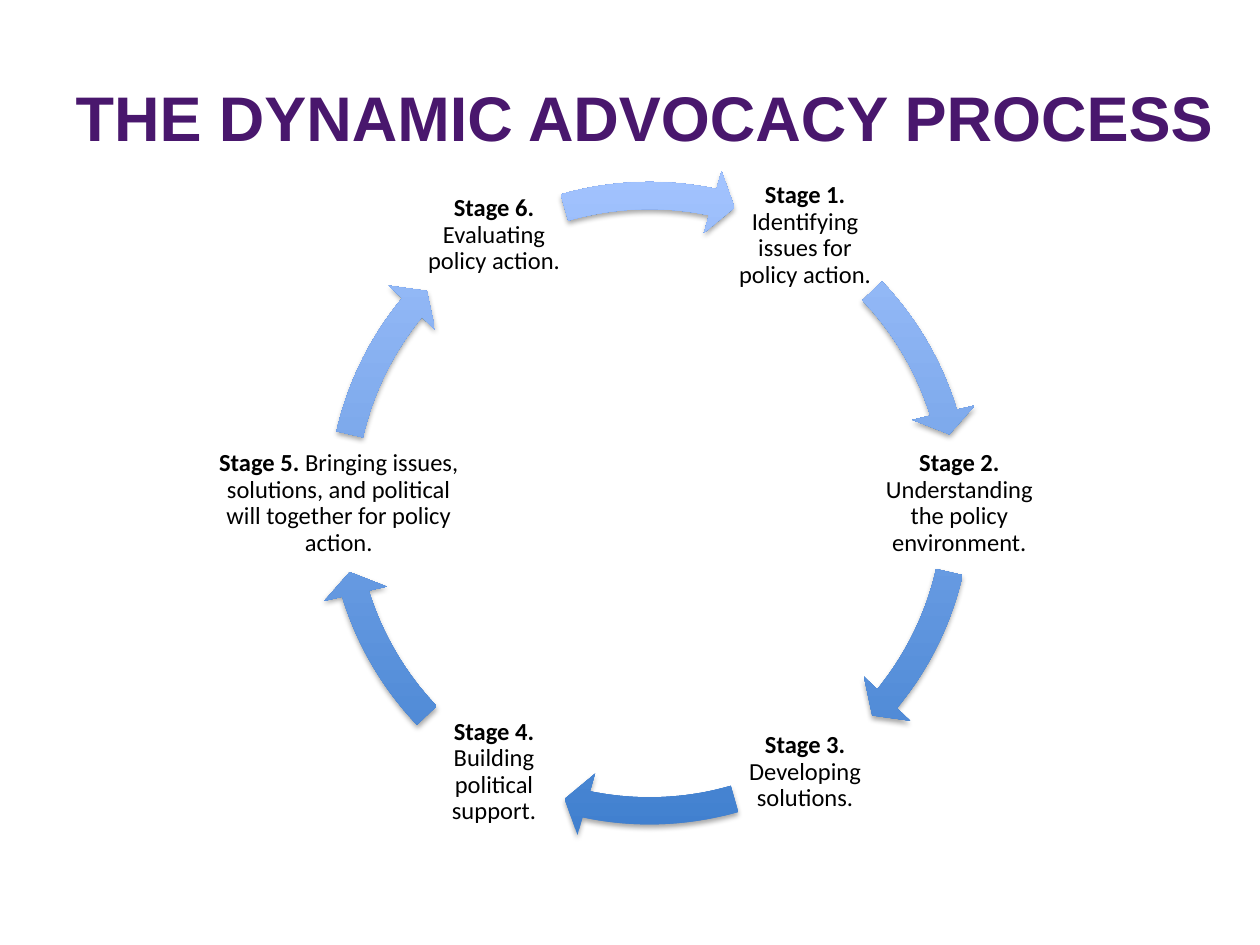
import lxml.etree
import pptx
import pptx.dml.color
import pptx.enum.shapes
import pptx.enum.text
import pptx.oxml.ns
import pptx.util

Cm = pptx.util.Cm
Pt = pptx.util.Pt
RGBColor = pptx.dml.color.RGBColor
qn = pptx.oxml.ns.qn

PURPLE = RGBColor(0x49, 0x17, 0x6D)
BLACK = RGBColor(0, 0, 0)
DARK_BLUE = RGBColor(0x3F, 0x7F, 0xCE)
LIGHT_BLUE = RGBColor(0xA4, 0xC4, 0xFF)

BOX_HEIGHT = 2.79
ROW_TOPS = [3.35 + row * 5.41 for row in range(3)]
STAGES = [
    ("Identifying issues for policy action.", 16.23, 0, 2.79),
    ("Understanding the policy environment.", 19.34, 1, 3.48),
    ("Developing solutions.", 16.23, 2, 2.79),
    ("Building political support.", 9.96, 2, 2.79),
    ("Bringing issues, solutions, and political will together for policy action.",
     6.83, 1, 5.08),
    ("Evaluating policy action.", 9.96, 0, 2.79),
]
HALF_TURN_ARCS = [(316.38, 342.89), (12.94, 39.46), (73.97, 101.86)]
ARCS = HALF_TURN_ARCS + [
    ((start + 180) % 360, (end + 180) % 360) for start, end in HALF_TURN_ARCS
]


def set_title(s, text):
    title = s.shapes.title
    title.left, title.top = Cm(1.27), Cm(0.76)
    title.width, title.height = Cm(23.72), Cm(3.18)
    tf = title.text_frame
    tf.text = text
    tf.auto_size = pptx.enum.text.MSO_AUTO_SIZE.NONE
    tf.vertical_anchor = pptx.enum.text.MSO_ANCHOR.MIDDLE
    p = tf.paragraphs[0]
    p.alignment = pptx.enum.text.PP_ALIGN.LEFT
    p.font.name = "Arial"
    p.font.size = Pt(36)
    p.font.bold = True
    p.font.color.rgb = PURPLE


def add_stage(s, number, text, center, row, width):
    sp = s.shapes.add_textbox(
        Cm(center - width / 2), Cm(ROW_TOPS[row]), Cm(width), Cm(BOX_HEIGHT)
    )
    tf = sp.text_frame
    tf.word_wrap = True
    tf.vertical_anchor = pptx.enum.text.MSO_ANCHOR.MIDDLE
    tf.margin_left = tf.margin_right = Cm(0.05)
    tf.margin_top = tf.margin_bottom = Cm(0.05)
    p = tf.paragraphs[0]
    p.alignment = pptx.enum.text.PP_ALIGN.CENTER
    p.line_spacing = 0.9
    p.space_after = Pt(4.9)
    p.font.name = "Calibri"
    p.font.size = Pt(14)
    p.font.color.rgb = BLACK
    for part, bold in ((f"Stage {number}. ", True), (text, False)):
        r = p.add_run()
        r.text = part
        r.font.bold = bold


def add_shadow(sp):
    sp.shadow.inherit = False
    effects = sp._element.spPr.find(qn("a:effectLst"))
    shadow = lxml.etree.SubElement(
        effects, qn("a:outerShdw"), blurRad=str(Pt(3.1)), dist=str(Pt(1.8)),
        dir="5400000", rotWithShape="0",
    )
    color = lxml.etree.SubElement(shadow, qn("a:srgbClr"), val=str(BLACK))
    lxml.etree.SubElement(color, qn("a:alpha"), val="35000")


def add_arc_arrow(s, start, end):
    sp = s.shapes.add_shape(
        pptx.enum.shapes.MSO_SHAPE.CIRCULAR_ARROW,
        Cm(6.25), Cm(3.3), Cm(13.69), Cm(13.69),
    )
    for i, value in enumerate((0.04, 2.5, end * 0.6, start * 0.6, 0.047)):
        sp.adjustments[i] = value
    sp.fill.gradient()
    sp.fill.gradient_angle = 90
    for stop, color in zip(sp.fill.gradient_stops, (DARK_BLUE, LIGHT_BLUE)):
        stop.color.rgb = color
    sp.line.fill.background()
    add_shadow(sp)


def main():
    prs = pptx.Presentation()
    prs.slide_width, prs.slide_height = Cm(25.4), Cm(19.05)
    s = prs.slides.add_slide(prs.slide_layouts[5])
    set_title(s, "THE DYNAMIC ADVOCACY PROCESS")
    for number, (stage, arc) in enumerate(zip(STAGES, ARCS), 1):
        add_stage(s, number, *stage)
        add_arc_arrow(s, *arc)
    prs.save("out.pptx")


if __name__ == "__main__":
    main()
